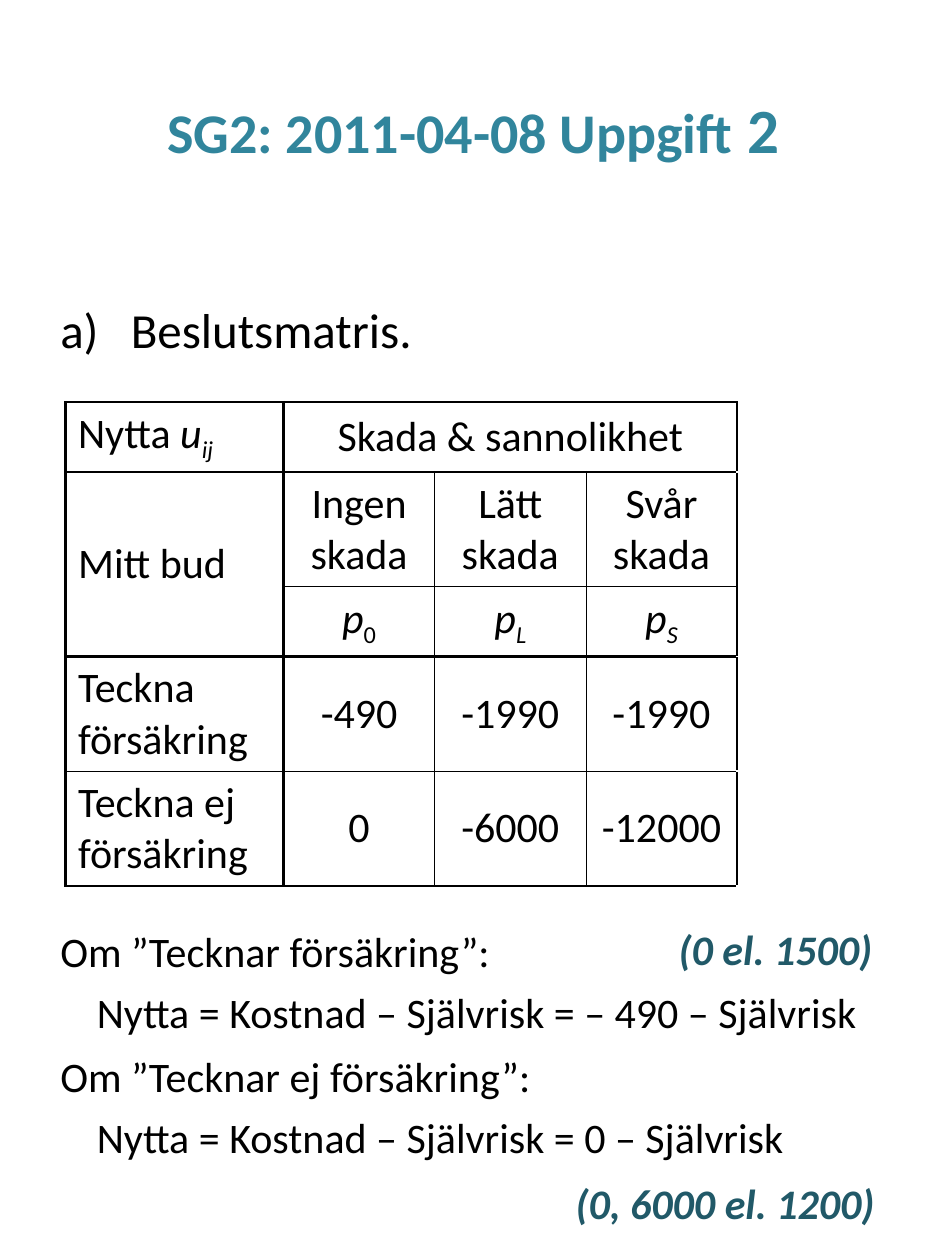
from lxml.etree import SubElement
from pptx import Presentation
from pptx.dml.color import RGBColor
from pptx.enum.text import MSO_ANCHOR, PP_ALIGN
from pptx.oxml import parse_xml
from pptx.oxml.ns import nsdecls, qn
from pptx.util import Inches, Pt

FONT = "Calibri"
BLACK = RGBColor(0x00, 0x00, 0x00)
TEAL = RGBColor(0x31, 0x85, 0x9C)
DARK_TEAL = RGBColor(0x21, 0x59, 0x68)

COLUMN_WIDTHS = [1.73, 1.2, 1.2, 1.2, 1.2]
ROW_HEIGHTS = [0.55, 0.91, 0.55, 0.91, 0.91]
THICK_COLUMN_EDGES = {0, 1, 4}
THICK_ROW_EDGES = {0, 1, 3, 5}
FRAMED_COLUMNS = 4
VALUE_ROW_WITH_TIGHT_MARGINS = 3

# A cell is a list of (text, italic, subscript) runs, or a plain string.
MATRIX = [
    [[("Nytta ", False, False), ("u", True, False), ("ij", True, True)],
     "Skada & sannolikhet", "", "", ""],
    ["Mitt bud", "Ingen skada", "Lätt skada", "Svår skada", ""],
    ["", [("p", True, False), ("0", False, True)],
     [("p", True, False), ("L", True, True)],
     [("p", True, False), ("S", True, True)], ""],
    ["Teckna försäkring", "-490", "-1990", "-1990", ""],
    ["Teckna ej försäkring", "0", "-6000", "-12000", ""],
]

EXPLANATION = [
    ("Om ”Tecknar försäkring”:", False),
    ("Nytta = Kostnad – Självrisk = – 490 – Självrisk", True),
    ("Om ”Tecknar ej försäkring”:", False),
    ("Nytta = Kostnad – Självrisk = 0 – Självrisk", True),
]


def style_font(font, size, color=BLACK, bold=False, italic=False):
    font.name = FONT
    font.size = Pt(size)
    font.color.rgb = color
    font.bold = bold
    font.italic = italic


def add_text_frame(slide, left, top, width, height):
    box = slide.shapes.add_textbox(
        Inches(left), Inches(top), Inches(width), Inches(height))
    box.text_frame.word_wrap = True
    return box.text_frame


def add_title(slide, left, top, width, height):
    frame = add_text_frame(slide, left, top, width, height)
    frame.vertical_anchor = MSO_ANCHOR.MIDDLE
    paragraph = frame.paragraphs[0]
    paragraph.alignment = PP_ALIGN.CENTER
    for text, size in [("SG2: 2011-04-08 Uppgift", 32), (" 2", 36)]:
        run = paragraph.add_run()
        run.text = text
        style_font(run.font, size, TEAL, bold=True)


def set_indent(paragraph, left, first_line=0):
    properties = paragraph._p.get_or_add_pPr()
    properties.set("marL", str(Inches(left)))
    properties.set("indent", str(Inches(first_line)))
    return properties


def add_question(slide, left, top, width, height):
    paragraph = add_text_frame(slide, left, top, width, height).paragraphs[0]
    paragraph.text = "Beslutsmatris."
    style_font(paragraph.font, 28)
    properties = set_indent(paragraph, 0.56, -0.56)
    numbering = parse_xml(
        f'<a:buAutoNum {nsdecls("a")} type="alphaLcParenR"/>')
    properties.insert(0, numbering)


def add_explanation(slide, left, top, width, height):
    frame = add_text_frame(slide, left, top, width, height)
    for index, (text, indented) in enumerate(EXPLANATION):
        paragraph = frame.add_paragraph() if index else frame.paragraphs[0]
        paragraph.text = text
        style_font(paragraph.font, 24)
        if index:
            paragraph.space_before = Pt(6 if indented else 7.6)
        if indented:
            set_indent(paragraph, 0.29)


def add_note(slide, text, left, top, width, height):
    frame = add_text_frame(slide, left, top, width, height)
    frame.word_wrap = False
    paragraph = frame.paragraphs[0]
    paragraph.text = text
    paragraph.alignment = PP_ALIGN.CENTER
    style_font(paragraph.font, 24, DARK_TEAL, bold=True, italic=True)


def fill_cell(cell, content, centered):
    paragraph = cell.text_frame.paragraphs[0]
    paragraph.alignment = PP_ALIGN.CENTER if centered else PP_ALIGN.LEFT
    runs = [(content, False, False)] if isinstance(content, str) else content
    for text, italic, subscript in runs:
        run = paragraph.add_run()
        run.text = text
        style_font(run.font, 24, italic=italic)
        if subscript:
            run.font._element.set("baseline", "-25000")


def set_borders(cell, row, column):
    """Draw the frame and group edges thick and the inner edges thin."""
    right = column + (cell.span_width if cell.is_merge_origin else 1)
    bottom = row + (cell.span_height if cell.is_merge_origin else 1)
    edges = [("a:lnL", column in THICK_COLUMN_EDGES),
             ("a:lnR", right in THICK_COLUMN_EDGES),
             ("a:lnT", row in THICK_ROW_EDGES),
             ("a:lnB", bottom in THICK_ROW_EDGES)]
    if column >= FRAMED_COLUMNS:
        edges = edges[:1]
    properties = cell._tc.get_or_add_tcPr()
    for index, (tag, thick) in enumerate(edges):
        line = SubElement(properties, qn(tag), w=str(Pt(1.5 if thick else 0.5)))
        fill = SubElement(line, qn("a:solidFill"))
        SubElement(fill, qn("a:srgbClr"), val=str(BLACK))
        properties.insert(index, line)


def add_matrix(slide, left, top):
    table = slide.shapes.add_table(
        len(ROW_HEIGHTS), len(COLUMN_WIDTHS), Inches(left), Inches(top),
        Inches(sum(COLUMN_WIDTHS)), Inches(sum(ROW_HEIGHTS))).table
    table.first_row = False
    table.horz_banding = False
    for column, width in zip(table.columns, COLUMN_WIDTHS):
        column.width = Inches(width)
    for row, height in zip(table.rows, ROW_HEIGHTS):
        row.height = Inches(height)
    table.cell(0, 1).merge(table.cell(0, 3))
    for column in (0, 4):
        table.cell(1, column).merge(table.cell(2, column))
    for row, contents in enumerate(MATRIX):
        for column, content in enumerate(contents):
            cell = table.cell(row, column)
            cell.vertical_anchor = MSO_ANCHOR.MIDDLE
            cell.fill.background()
            if content:
                fill_cell(cell, content, centered=column > 0)
            if row == VALUE_ROW_WITH_TIGHT_MARGINS and 0 < column < FRAMED_COLUMNS:
                cell.margin_left = cell.margin_right = Inches(0.01)
                cell.margin_top, cell.margin_bottom = Inches(0.01), 0
            set_borders(cell, row, column)


def main():
    presentation = Presentation()
    presentation.slide_width = Inches(7.5)
    presentation.slide_height = Inches(10)
    slide = presentation.slides.add_slide(presentation.slide_layouts[6])
    add_title(slide, 0.38, 0.4, 6.75, 1.24)
    add_question(slide, 0.38, 2.33, 6.92, 0.6)
    add_explanation(slide, 0.38, 7.3, 6.92, 2.1)
    add_matrix(slide, 0.52, 3.19)
    add_note(slide, "(0 el. 1500)", 5.17, 7.28, 1.97, 0.5)
    add_note(slide, "(0, 6000 el. 1200)", 4.3, 9.3, 2.91, 0.5)
    presentation.save("out.pptx")


if __name__ == "__main__":
    main()
